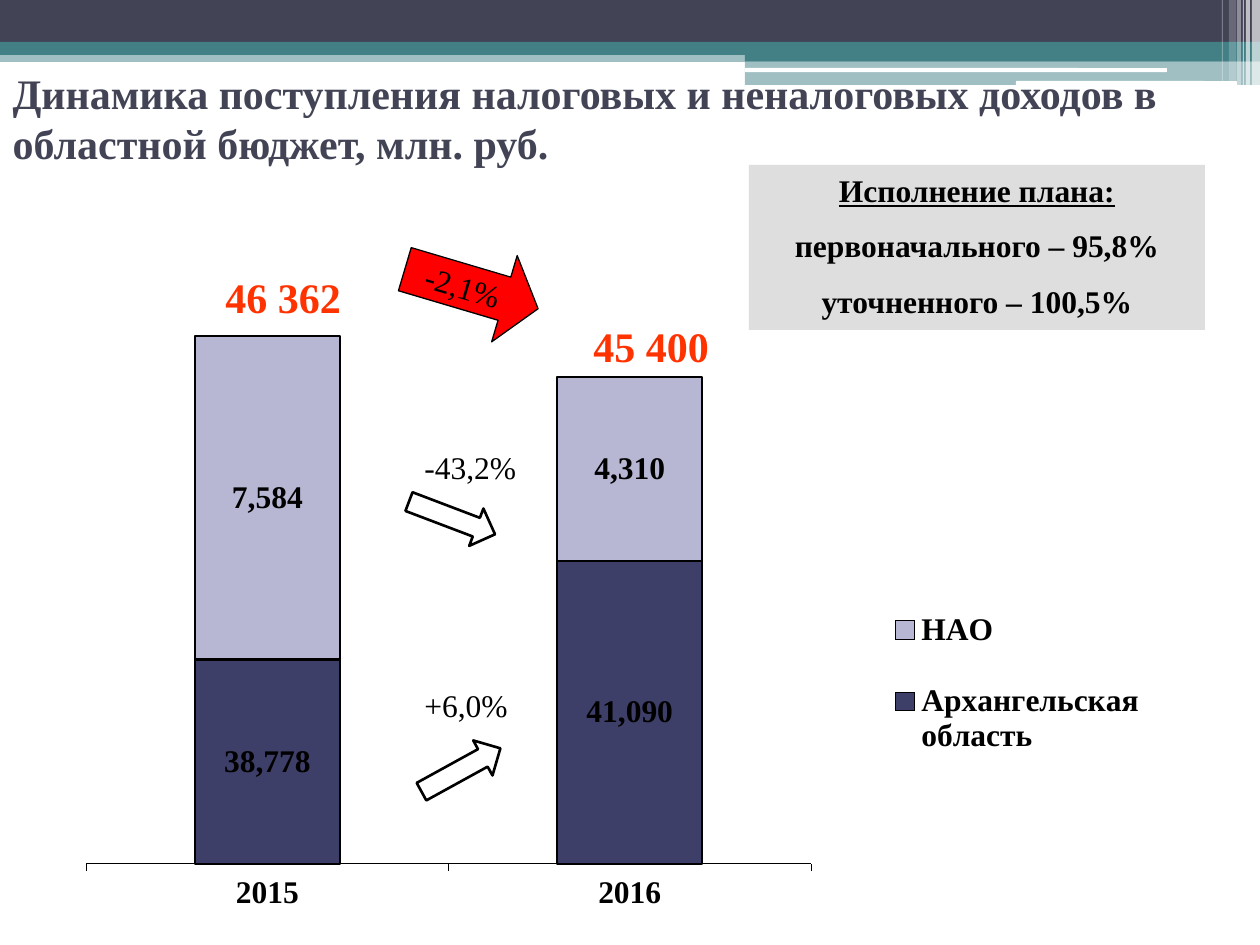
from lxml.etree import SubElement
from pptx import Presentation
from pptx.chart.data import CategoryChartData
from pptx.dml.color import RGBColor
from pptx.enum.chart import XL_CHART_TYPE as ChartType
from pptx.enum.chart import XL_LEGEND_POSITION as LegendPosition
from pptx.enum.chart import XL_TICK_LABEL_POSITION as TickLabels
from pptx.enum.chart import XL_TICK_MARK as TickMark
from pptx.enum.shapes import MSO_SHAPE as Preset
from pptx.enum.text import MSO_ANCHOR as Anchor
from pptx.enum.text import PP_ALIGN as Align
from pptx.oxml import parse_xml
from pptx.oxml.ns import nsdecls, qn
from pptx.util import Pt

PX = 914400 // 126
FONT = "Times New Roman"
BLACK = RGBColor(0x00, 0x00, 0x00)
WHITE = RGBColor(0xFF, 0xFF, 0xFF)
SLATE = RGBColor(0x42, 0x44, 0x56)
TEAL = RGBColor(0x43, 0x80, 0x86)
RED = RGBColor(0xFF, 0x00, 0x00)
ORANGE = RGBColor(0xFF, 0x33, 0x00)
GREY = RGBColor(0xDE, 0xDE, 0xDE)
NAVY = RGBColor(0x3E, 0x3F, 0x68)
LILAC = RGBColor(0xB7, 0xB7, 0xD4)

LABEL = {"name": FONT, "size": Pt(18), "bold": False}
STRONG = {**LABEL, "bold": True}
HEADING = {**STRONG, "size": Pt(24)}


def emu(*lengths):
    return [length * PX for length in lengths]


def set_font(font, formats, color=BLACK):
    for attribute, value in formats.items():
        setattr(font, attribute, value)
    font.color.rgb = color


def add_shape(slide, preset, box, fill=None, alpha=100, line=0, rotation=0):
    shape = slide.shapes.add_shape(preset, *emu(*box))
    shape.shadow.inherit = False
    shape.rotation = rotation
    if fill is None:
        shape.fill.background()
    else:
        shape.fill.solid()
        shape.fill.fore_color.rgb = fill
        if alpha < 100:
            color = shape.element.spPr.find(".//" + qn("a:srgbClr"))
            SubElement(color, qn("a:alpha"), val=str(alpha * 1000))
    if line:
        shape.line.color.rgb = BLACK
        shape.line.width = Pt(line)
    else:
        shape.line.fill.background()
    return shape


def write(shape, lines, formats, color=BLACK, align=Align.LEFT, anchor=Anchor.TOP, wrap=True):
    frame = shape.text_frame
    frame.word_wrap = wrap
    frame.vertical_anchor = anchor
    for index, line in enumerate(lines):
        paragraph = frame.paragraphs[0] if index == 0 else frame.add_paragraph()
        paragraph.alignment = align
        if index:
            paragraph.space_before = Pt(10)
        run = paragraph.add_run()
        run.text = line
        set_font(run.font, formats, color)


def add_header(slide, left, top, width):
    """Coloured bands with thin white stripes at the right end."""
    accent = 745
    bands = [
        (Preset.RECTANGLE, 0, 50, width, 12, TEAL, 50),
        (Preset.RECTANGLE, 0, 0, width, 43, SLATE, 100),
        (Preset.RECTANGLE, 0, 42, width, 13, TEAL, 100),
        (Preset.RECTANGLE, accent, 49, width - accent, 12, TEAL, 100),
        (Preset.RECTANGLE, accent, 61, width - accent, 24, TEAL, 50),
        (Preset.ROUNDED_RECTANGLE, accent, 68, 422, 4, WHITE, 100),
        (Preset.ROUNDED_RECTANGLE, 1016, 81, 221, 5, WHITE, 100),
    ]
    stripes = [(1252, 8, 85, 65), (1246, 4, 85, 65), (1243, 1, 85, 60),
               (1237, 4, 85, 40), (1229, 7, 81, 20), (1222, 1, 81, 30)]
    bands += [(Preset.RECTANGLE, x, 0, w, h, WHITE, alpha) for x, w, h, alpha in stripes]
    for preset, x, y, w, h, color, alpha in bands:
        add_shape(slide, preset, (left + x, top + y, w, h), color, alpha)


def add_title(slide, box, text):
    title = slide.shapes.title
    title.left, title.top, title.width, title.height = emu(*box)
    write(title, [text], HEADING, SLATE, anchor=Anchor.MIDDLE)
    title.element.getparent().append(title.element)  # in front of the bands


def set_layout(parent, x, y, w, h, inner=False):
    """Fix the place of a chart part, in fractions of the chart."""
    target = '<c:layoutTarget val="inner"/>' if inner else ""
    values = "".join(f'<c:{tag} val="{value}"/>' for tag, value in
                     (("xMode", "edge"), ("yMode", "edge"), ("x", x), ("y", y), ("w", w), ("h", h)))
    for old in parent.findall(qn("c:layout")):
        parent.remove(old)
    layout = parse_xml(f'<c:layout {nsdecls("c")}><c:manualLayout>{target}{values}'
                       "</c:manualLayout></c:layout>")
    parent.insert(0 if inner else 1, layout)


def add_revenue_chart(slide, box):
    data = CategoryChartData(number_format="#,##0")
    data.categories = ["2015", "2016"]
    data.add_series("Архангельская область", (38778, 41090))
    data.add_series("НАО", (7584, 4310))
    chart = slide.shapes.add_chart(ChartType.COLUMN_STACKED, *emu(*box), data).chart
    chart.has_title = False
    set_font(chart.font, STRONG)

    # Columns and their values
    plot = chart.plots[0]
    plot.gap_width, plot.overlap, plot.vary_by_categories = 150, 100, False
    for series, color in zip(plot.series, (NAVY, LILAC)):
        series.format.fill.solid()
        series.format.fill.fore_color.rgb = color
        series.format.line.color.rgb = BLACK
        series.format.line.width = Pt(1.34)
        labels = series.data_labels
        labels.show_value = True
        labels.number_format, labels.number_format_is_linked = "#,##0", False
        set_font(labels.font, STRONG)

    # Axes
    values = chart.value_axis
    values.minimum_scale, values.maximum_scale = 34000, 48000
    values.has_major_gridlines = values.visible = False
    years = chart.category_axis
    years.major_tick_mark = TickMark.OUTSIDE
    years.tick_label_position = TickLabels.LOW
    years.format.line.color.rgb = BLACK
    years.format.line.width = Pt(0.34)
    set_font(years.tick_labels.font, STRONG)

    # Legend
    chart.has_legend = True
    legend = chart.legend
    legend.position = LegendPosition.RIGHT
    legend.include_in_layout = False
    set_font(legend.font, STRONG)
    plot_area = chart.element.find(".//" + qn("c:plotArea"))
    set_layout(plot_area, 0.02, 0.08, 0.65, 0.81, inner=True)
    set_layout(chart.element.find(".//" + qn("c:legend")), 0.73, 0.5, 0.25, 0.29)


def add_labels(slide, left, top):
    """Totals above the columns and changes between them."""
    labels = [("46 362", 149, 58, 169, HEADING, ORANGE), ("45 400", 517, 107, 169, HEADING, ORANGE),
              ("+6,0%", 348, 473, 110, LABEL, BLACK), ("-43,2%", 348, 235, 118, LABEL, BLACK)]
    for text, x, y, width, formats, color in labels:
        height = 63 if formats is HEADING else 50
        text_box = slide.shapes.add_textbox(*emu(left + x, top + y, width, height))
        write(text_box, [text], formats, color, wrap=formats is HEADING)


def add_arrows(slide, left, top):
    total = add_shape(slide, Preset.RIGHT_ARROW, (left + 338, top + 37, 139, 90), RED,
                      line=0.75, rotation=16.5)
    total.adjustments[1] = 0.39
    write(total, ["-2,1%"], LABEL, align=Align.CENTER, anchor=Anchor.MIDDLE, wrap=False)
    for x, y, width, rotation in ((342, 291, 92, 20.8), (352, 543, 90, 331.2)):
        add_shape(slide, Preset.RIGHT_ARROW, (left + x, top + y, width, 40), line=1.5,
                  rotation=rotation)


def add_plan_panel(slide, box):
    panel = add_shape(slide, Preset.RECTANGLE, box, GREY)
    lines = ["Исполнение плана:", "первоначального – 95,8%", "уточненного – 100,5%"]
    write(panel, lines, STRONG, align=Align.CENTER)
    panel.text_frame.paragraphs[0].runs[0].font.underline = True


def main():
    presentation = Presentation()
    presentation.slide_width, presentation.slide_height = emu(1260, 945)
    slide = presentation.slides.add_slide(presentation.slide_layouts[5])
    add_header(slide, 0, 0, 1260)
    add_title(slide, (0, 55, 1260, 125),
              "Динамика поступления налоговых и неналоговых доходов в областной бюджет, млн. руб.")
    left, top = 64, 207
    add_revenue_chart(slide, (left, top, 1115, 738))
    add_labels(slide, left, top)
    add_arrows(slide, left, top)
    add_plan_panel(slide, (749, 165, 456, 165))
    presentation.save("out.pptx")


if __name__ == "__main__":
    main()
